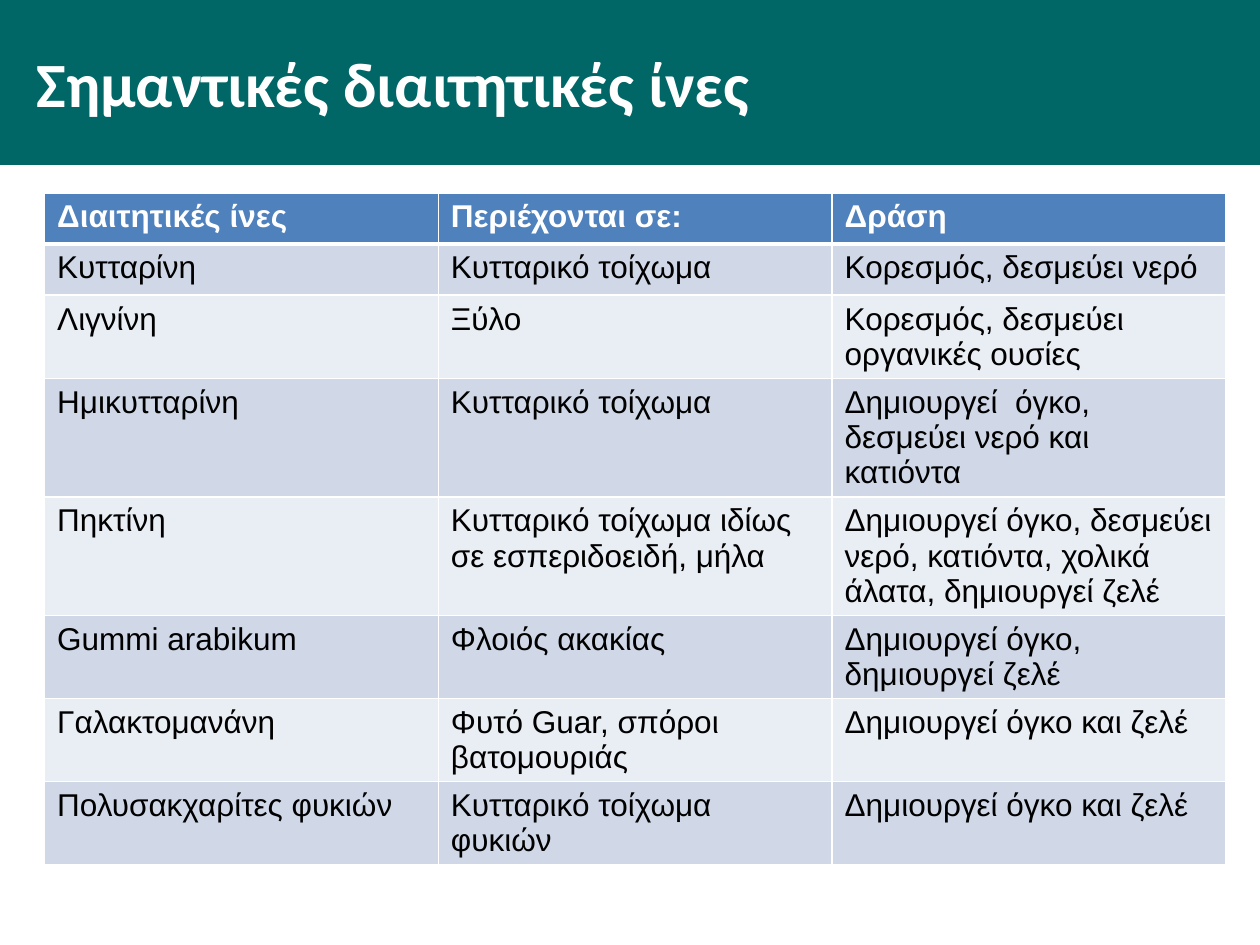
from lxml import etree
from pptx import Presentation
from pptx.dml.color import RGBColor
from pptx.enum import shapes, text
from pptx.oxml import ns
from pptx.util import Pt

WHITE = RGBColor(0xFF, 0xFF, 0xFF)
BLACK = RGBColor(0x00, 0x00, 0x00)
TEAL = RGBColor(0x00, 0x66, 0x66)
BLUE = RGBColor(0x4F, 0x81, 0xBD)
BAND_DARK = RGBColor(0xD0, 0xD8, 0xE8)
BAND_LIGHT = RGBColor(0xE9, 0xED, 0xF4)

FIBRES = [
    ("Διαιτητικές ίνες", "Περιέχονται σε:", "Δράση"),
    ("Κυτταρίνη", "Κυτταρικό τοίχωμα", "Κορεσμός, δεσμεύει νερό"),
    ("Λιγνίνη", "Ξύλο", "Κορεσμός, δεσμεύει οργανικές ουσίες"),
    ("Ημικυτταρίνη", "Κυτταρικό τοίχωμα",
     "Δημιουργεί  όγκο, δεσμεύει νερό και κατιόντα"),
    ("Πηκτίνη", "Κυτταρικό τοίχωμα ιδίως σε εσπεριδοειδή, μήλα",
     "Δημιουργεί όγκο, δεσμεύει νερό, κατιόντα, χολικά άλατα, δημιουργεί ζελέ"),
    ("Gummi arabikum", "Φλοιός ακακίας", "Δημιουργεί όγκο, δημιουργεί ζελέ"),
    ("Γαλακτομανάνη", "Φυτό Guar, σπόροι βατομουριάς", "Δημιουργεί όγκο και ζελέ"),
    ("Πολυσακχαρίτες φυκιών", "Κυτταρικό τοίχωμα φυκιών", "Δημιουργεί όγκο και ζελέ"),
]


def add_run(paragraph, wording, font, size, color, bold):
    run = paragraph.add_run()
    run.text = wording
    run.font.name = font
    run.font.size = Pt(size)
    run.font.color.rgb = color
    run.font.bold = bold


def add_title_band(slide, left, top, width, height):
    band = slide.shapes.add_shape(shapes.MSO_SHAPE.RECTANGLE,
                                  Pt(left), Pt(top), Pt(width), Pt(height))
    band.shadow.inherit = False
    band.fill.solid()
    band.fill.fore_color.rgb = TEAL
    band.line.fill.background()
    frame = band.text_frame
    frame.word_wrap = True
    frame.margin_left = Pt(20.9)
    frame.vertical_anchor = text.MSO_ANCHOR.MIDDLE
    title = frame.paragraphs[0]
    title.alignment = text.PP_ALIGN.LEFT
    add_run(title, "Σημαντικές διαιτητικές ίνες", "Calibri", 36, WHITE, True)


def add_borders(cell, top, bottom):
    """Draw white cell borders; top and bottom are widths in points."""
    properties = cell._tc.get_or_add_tcPr()
    for side, width in (("L", 1), ("R", 1), ("T", top), ("B", bottom)):
        line = etree.SubElement(properties, ns.qn(f"a:ln{side}"), w=str(Pt(width)))
        fill = etree.SubElement(line, ns.qn("a:solidFill"))
        etree.SubElement(fill, ns.qn("a:srgbClr"), val=str(WHITE))


def add_fibre_table(slide, left, top, width, row_height):
    """Rows start at row_height and grow with their text."""
    columns = len(FIBRES[0])
    table = slide.shapes.add_table(len(FIBRES), columns, Pt(left), Pt(top),
                                   Pt(width), Pt(row_height * len(FIBRES))).table
    for column in table.columns:
        column.width = Pt(width / columns)
    for r, fibre in enumerate(FIBRES):
        header = r == 0
        band = BLUE if header else BAND_DARK if r % 2 else BAND_LIGHT
        table.rows[r].height = Pt(row_height)
        for c, wording in enumerate(fibre):
            cell = table.cell(r, c)
            add_borders(cell, top=3 if r == 1 else 1, bottom=3 if header else 1)
            cell.fill.solid()
            cell.fill.fore_color.rgb = band
            add_run(cell.text_frame.paragraphs[0], wording, "Arial", 18,
                    WHITE if header else BLACK, header)


def main():
    deck = Presentation()
    deck.slide_width, deck.slide_height = Pt(720), Pt(540)
    slide = deck.slides.add_slide(deck.slide_layouts[6])
    add_title_band(slide, 0, 0, 720, 94.3)
    add_fibre_table(slide, 25.5, 110.3, 675, 29.2)
    deck.save("out.pptx")


if __name__ == "__main__":
    main()
